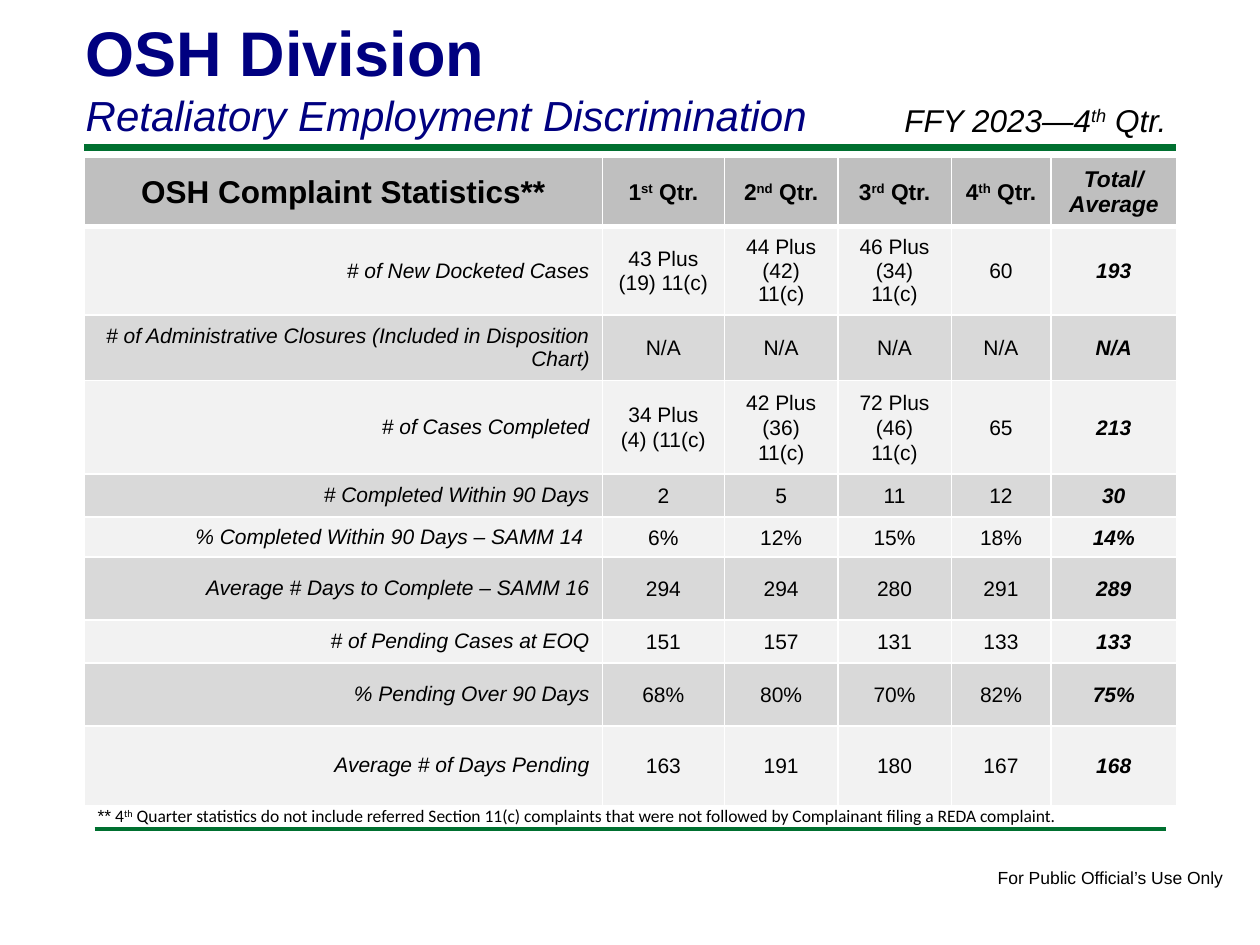
from lxml import etree
from pptx import Presentation
from pptx.dml.color import RGBColor
from pptx.enum.shapes import MSO_CONNECTOR
from pptx.enum.text import MSO_ANCHOR, PP_ALIGN
from pptx.oxml.ns import qn
from pptx.util import Inches, Pt

STRAIGHT = MSO_CONNECTOR.STRAIGHT
TOP, MIDDLE = MSO_ANCHOR.TOP, MSO_ANCHOR.MIDDLE
LEFT, CENTER, RIGHT = PP_ALIGN.LEFT, PP_ALIGN.CENTER, PP_ALIGN.RIGHT

COLORS = {
    "navy": "000080", "green": "007030", "black": "000000", "white": "FFFFFF",
    "header": "BFBFBF", "light": "F2F2F2", "dark": "D9D9D9",
}
MARGIN = 0.67  # left edge shared by the rule, the table and the footnote

COLUMN_WIDTHS = [4.11, 0.97, 0.9, 0.9, 0.79, 1]
ROW_HEIGHTS = [0.55, 0.7, 0.52, 0.74, 0.34, 0.32, 0.5, 0.34, 0.5, 0.63]
# A caret pair marks superscript; a line feed starts a new paragraph.
HEADER = ["OSH Complaint Statistics**", "1^st^ Qtr.", "2^nd^ Qtr.",
          "3^rd^ Qtr.", "4^th^ Qtr.", "Total/ Average"]
STATISTICS = [
    ["# of New Docketed Cases", "43 Plus\n(19) 11(c)", "44 Plus\n(42) 11(c)",
     "46 Plus\n(34) 11(c)", "60", "193"],
    ["# of Administrative Closures (Included in Disposition Chart)",
     "N/A", "N/A", "N/A", "N/A", "N/A"],
    ["# of Cases Completed", "34 Plus\n(4) (11(c)", "42 Plus\n(36) 11(c)",
     "72 Plus\n(46) 11(c)", "65", "213"],
    ["# Completed Within 90 Days", "2", "5", "11", "12", "30"],
    ["% Completed Within 90 Days – SAMM 14 ", "6%", "12%", "15%", "18%", "14%"],
    ["Average # Days to Complete – SAMM 16", "294", "294", "280", "291", "289"],
    ["# of Pending Cases at EOQ", "151", "157", "131", "133", "133"],
    ["% Pending Over 90 Days", "68%", "80%", "70%", "82%", "75%"],
    ["Average # of Days Pending", "163", "191", "180", "167", "168"],
]


def rgb(name):
    return RGBColor.from_string(COLORS[name])


def add_runs(paragraph, text, size, color="black", font="Arial",
             bold=False, italic=False):
    """Add text to a paragraph; parts between carets become superscript."""
    for index, part in enumerate(text.split("^")):
        run = paragraph.add_run()
        run.text = part
        run.font.name = font
        run.font.size = Pt(size)
        run.font.bold = bold
        run.font.italic = italic
        run.font.color.rgb = rgb(color)
        if index % 2:
            run._r.get_or_add_rPr().set("baseline", "30000")


def add_rule(slide, left, top, width, weight):
    rule = slide.shapes.add_connector(
        STRAIGHT, Inches(left), Inches(top), Inches(left + width), Inches(top))
    rule.line.color.rgb = rgb("green")
    rule.line.width = Pt(weight)
    etree.SubElement(rule._element.spPr, qn("a:effectLst"))


def add_text_box(slide, left, top, width, height, wrap):
    """Add an empty text box and return its first paragraph."""
    box = slide.shapes.add_textbox(
        Inches(left), Inches(top), Inches(width), Inches(height))
    box.text_frame.word_wrap = wrap
    return box.text_frame.paragraphs[0]


def set_title(slide):
    title = slide.shapes.title
    title.left, title.top = Inches(0.58), Inches(0.06)
    title.width, title.height = Inches(8.25), Inches(1.11)
    frame = title.text_frame
    frame.vertical_anchor = TOP
    name, subject = frame.paragraphs[0], frame.add_paragraph()
    name.alignment = subject.alignment = LEFT
    add_runs(name, "OSH Division", 36, "navy", bold=True)
    add_runs(subject, "Retaliatory Employment Discrimination", 24, "navy",
             italic=True)


def set_borders(cell, top, bottom):
    properties = cell._tc.get_or_add_tcPr()
    sides = {"a:lnL": 1, "a:lnR": 1, "a:lnT": top, "a:lnB": bottom}
    for tag, weight in sides.items():
        line = etree.SubElement(properties, qn(tag), w=str(Pt(weight)))
        fill = etree.SubElement(line, qn("a:solidFill"))
        etree.SubElement(fill, qn("a:srgbClr"), val=COLORS["white"])


def fill_cell(cell, text, row, column):
    """Style a cell by its place: header row, label column, total column."""
    is_header, is_label = row == 0, column == 0
    is_total = column == len(COLUMN_WIDTHS) - 1
    set_borders(cell, 3 if row == 1 else 1, 3 if is_header else 1)
    cell.fill.solid()
    cell.fill.fore_color.rgb = rgb(
        "header" if is_header else "light" if row % 2 else "dark")
    cell.vertical_anchor = MIDDLE
    if is_header:
        size = 18 if is_label else 13
    else:
        size = 12
    for index, line in enumerate(text.split("\n")):
        frame = cell.text_frame
        paragraph = frame.add_paragraph() if index else frame.paragraphs[0]
        paragraph.alignment = RIGHT if is_label and not is_header else CENTER
        if row > 1 and not is_label:
            paragraph.line_spacing = 1.07
        add_runs(paragraph, line, size, bold=is_header or is_total,
                 italic=is_total or (is_label and not is_header))


def add_statistics_table(slide):
    rows = [HEADER] + STATISTICS
    table = slide.shapes.add_table(
        len(rows), len(HEADER), Inches(MARGIN), Inches(1.25),
        Inches(sum(COLUMN_WIDTHS)), Inches(sum(ROW_HEIGHTS))).table
    for column, width in zip(table.columns, COLUMN_WIDTHS):
        column.width = Inches(width)
    for row, height in zip(table.rows, ROW_HEIGHTS):
        row.height = Inches(height)
    for row, texts in enumerate(rows):
        for column, text in enumerate(texts):
            fill_cell(table.cell(row, column), text, row, column)


def main():
    presentation = Presentation()
    presentation.slide_width, presentation.slide_height = Inches(10), Inches(7.5)
    slide = presentation.slides.add_slide(presentation.slide_layouts[5])

    # Rules and page footer
    add_rule(slide, MARGIN, 1.17, 10 - 2 * MARGIN, 4)
    add_rule(slide, 0.75, 6.58, 8.5, 2)
    footer = add_text_box(slide, 7.82, 6.83, 2.01, 0.27, False)
    add_runs(footer, "For Public Official’s Use Only", 10)

    # Title, period and statistics
    set_title(slide)
    add_statistics_table(slide)
    period = add_text_box(slide, 7.08, 0.75, 2.5, 0.4, True)
    add_runs(period, "FFY 2023—4^th^ Qtr.", 18, italic=True)

    # Footnote
    footnote = add_text_box(slide, MARGIN, 6.33, 7.91, 0.7, False)
    footnote.line_spacing = 1.07
    add_runs(footnote, "** ", 10, italic=True)
    add_runs(footnote, "4^th^ Quarter statistics do not include referred "
             "Section 11(c) complaints that were not followed by Complainant "
             "filing a REDA complaint.", 10, font="Calibri")

    presentation.save("out.pptx")


if __name__ == "__main__":
    main()
